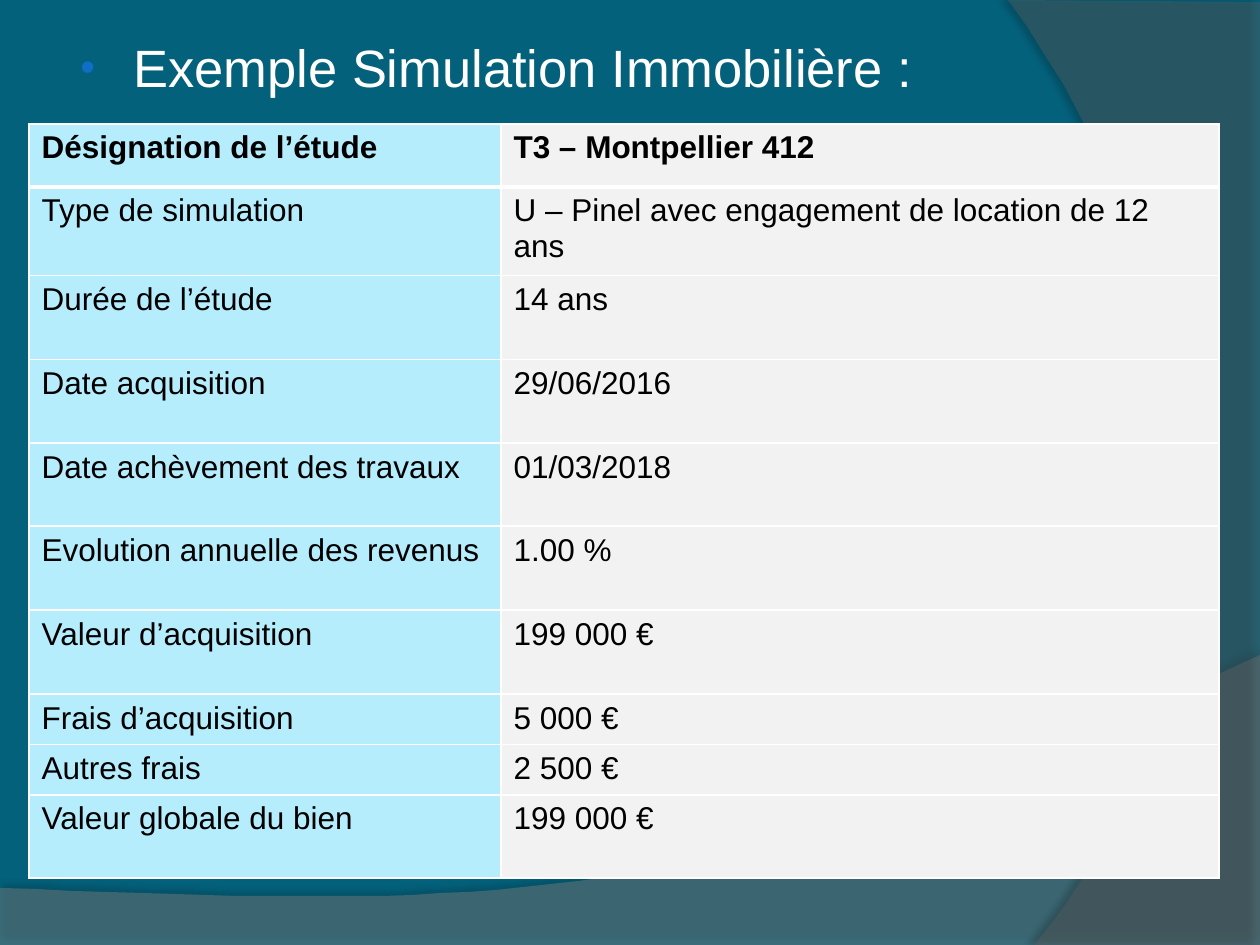
import lxml.etree
import pptx
import pptx.dml.color
import pptx.oxml
import pptx.oxml.ns
import pptx.util

RGBColor = pptx.dml.color.RGBColor
TEAL = RGBColor(0x04, 0x61, 0x7B)
WAVE_GRAY = RGBColor(0x7F, 0x7F, 0x7F)
ARC_GRAY = RGBColor(0x5E, 0x5E, 0x5E)
BULLET_BLUE = RGBColor(0x0F, 0x6F, 0xC6)
LABEL_BLUE = RGBColor(0xB5, 0xED, 0xFD)
VALUE_GRAY = RGBColor(0xF2, 0xF2, 0xF2)
WHITE = RGBColor(0xFF, 0xFF, 0xFF)
BLACK = RGBColor(0, 0, 0)

EMU_PER_PX = 914400 / 126
EMU_PER_POINT = 12700
WIDTH, HEIGHT = 1260, 945

ROWS = [
    ("Désignation de l’étude", "T3 – Montpellier 412"),
    ("Type de simulation", "U – Pinel avec engagement de location de 12 ans"),
    ("Durée de l’étude", "14 ans"),
    ("Date acquisition", "29/06/2016"),
    ("Date achèvement des travaux", "01/03/2018"),
    ("Evolution annuelle des revenus", "1.00 %"),
    ("Valeur d’acquisition", "199 000 €"),
    ("Frais d’acquisition", "5 000 €"),
    ("Autres frais", "2 500 €"),
    ("Valeur globale du bien", "199 000 €"),
]
ROW_HEIGHTS = [63, 83, 84, 84, 83, 84, 84, 48, 48, 83]
COLUMN_WIDTHS = [472, 718]


def px(length):
    return pptx.util.Emu(round(length * EMU_PER_PX))


def add_xml(parent, markup, index=None):
    """Parse markup in the a: namespace and put it in parent, last by default."""
    tag, rest = markup[1:].split(" ", 1)
    element = pptx.oxml.parse_xml(f"<{tag} {pptx.oxml.ns.nsdecls('a')} {rest}")
    parent.insert(len(parent) if index is None else index, element)


def cubic(start, first, second, end, steps=40):
    """Points along a Bézier curve, its start left out."""
    points = []
    for step in range(1, steps + 1):
        t = step / steps
        weights = ((1 - t) ** 3, 3 * t * (1 - t) ** 2, 3 * t * t * (1 - t), t ** 3)
        points.append(tuple(
            sum(weight * value for weight, value in zip(weights, values))
            for values in zip(start, first, second, end)))
    return points


def write_text(frame, text, size=18, color=BLACK, bold=False, font="Arial"):
    paragraph = frame.paragraphs[0]
    run = paragraph.add_run()
    run.text = text
    run.font.name = font
    run.font.size = pptx.util.Pt(size)
    run.font.bold = bold
    run.font.color.rgb = color
    return paragraph


class SlideBuilder:
    def __init__(self, slide, border_color=WHITE):
        self.slide = slide
        self.border_color = border_color

    def background(self, color):
        fill = self.slide.background.fill
        fill.solid()
        fill.fore_color.rgb = color

    def translucent_outline(self, points, color, opacity, shadow_opacity,
                            shadow_distance, shadow_angle):
        builder = self.slide.shapes.build_freeform(*points[0], scale=EMU_PER_PX)
        builder.add_line_segments(points[1:], close=True)
        shape = builder.convert_to_shape()
        shape.shadow.inherit = False
        shape.line.fill.background()
        shape.fill.solid()
        shape.fill.fore_color.rgb = color
        properties = shape._element.spPr
        fill_color = properties.find(".//" + pptx.oxml.ns.qn("a:srgbClr"))
        add_xml(fill_color, f'<a:alpha val="{opacity * 1000}"/>')
        effects = properties.find(pptx.oxml.ns.qn("a:effectLst"))
        add_xml(effects,
                f'<a:outerShdw blurRad="{4 * EMU_PER_POINT}" '
                f'dist="{round(shadow_distance * EMU_PER_POINT)}" '
                f'dir="{shadow_angle * 60000}" algn="ctr" rotWithShape="0">'
                f'<a:srgbClr val="{BLACK}"><a:alpha val="{shadow_opacity * 1000}"/>'
                '</a:srgbClr></a:outerShdw>')

    def bulleted_title(self, text, left, top, width, height):
        box = self.slide.shapes.add_textbox(px(left), px(top), px(width), px(height))
        box.text_frame.word_wrap = True
        paragraph = write_text(box.text_frame, text, size=30, color=WHITE)
        properties = paragraph._p.get_or_add_pPr()
        properties.set("marL", str(px(58)))
        properties.set("indent", str(px(-53)))
        add_xml(properties, '<a:spcBef ><a:spcPct val="20000"/></a:spcBef>')
        add_xml(properties, f'<a:buClr ><a:srgbClr val="{BULLET_BLUE}"/></a:buClr>')
        add_xml(properties, '<a:buSzPct val="80000"/>')
        add_xml(properties, '<a:buFont typeface="Arial"/>')
        add_xml(properties, '<a:buChar char="•"/>')

    def cell_borders(self, cell, top=1, bottom=1):
        properties = cell._tc.get_or_add_tcPr()
        widths = {"lnL": 1, "lnR": 1, "lnT": top, "lnB": bottom}
        for index, (side, width) in enumerate(widths.items()):
            add_xml(properties,
                    f'<a:{side} w="{width * EMU_PER_POINT}"><a:solidFill>'
                    f'<a:srgbClr val="{self.border_color}"/></a:solidFill></a:{side}>',
                    index)

    def two_column_table(self, rows, left, top):
        table = self.slide.shapes.add_table(
            len(rows), len(COLUMN_WIDTHS), px(left), px(top),
            px(sum(COLUMN_WIDTHS)), px(sum(ROW_HEIGHTS))).table
        table.horz_banding = False
        for column, width in zip(table.columns, COLUMN_WIDTHS):
            column.width = px(width)
        for row_index, texts in enumerate(rows):
            table.rows[row_index].height = px(ROW_HEIGHTS[row_index])
            for column_index, color in enumerate((LABEL_BLUE, VALUE_GRAY)):
                cell = table.cell(row_index, column_index)
                cell.fill.solid()
                cell.fill.fore_color.rgb = color
                write_text(cell.text_frame, texts[column_index], bold=row_index == 0)
                self.cell_borders(cell, top=3 if row_index == 1 else 1,
                                  bottom=3 if row_index == 0 else 1)


def main():
    presentation = pptx.Presentation()
    presentation.slide_width, presentation.slide_height = px(WIDTH), px(HEIGHT)
    builder = SlideBuilder(presentation.slides.add_slide(presentation.slide_layouts[6]))
    builder.background(TEAL)

    wave_start, wave_end = (WIDTH, 655), (0, 888)
    wave = [wave_end, (0, HEIGHT), (WIDTH, HEIGHT), wave_start]
    wave += cubic(wave_start, (704, 919), (493, 906), wave_end)
    builder.translucent_outline(wave, WAVE_GRAY, opacity=45, shadow_opacity=35,
                                shadow_distance=3.5, shadow_angle=270)

    arc_start, arc_end = (1034, HEIGHT), (1008, 0)
    arc = [(WIDTH, 2), (WIDTH, HEIGHT), arc_start]
    arc += cubic(arc_start, (1178, 780), (1283, 378), arc_end)
    builder.translucent_outline(arc, ARC_GRAY, opacity=40, shadow_opacity=45,
                                shadow_distance=4, shadow_angle=180)

    builder.bulleted_title("Exemple Simulation Immobilière :", 63, 29, 1168, 876)
    builder.two_column_table(ROWS, 29, 124)
    presentation.save("out.pptx")


if __name__ == "__main__":
    main()
